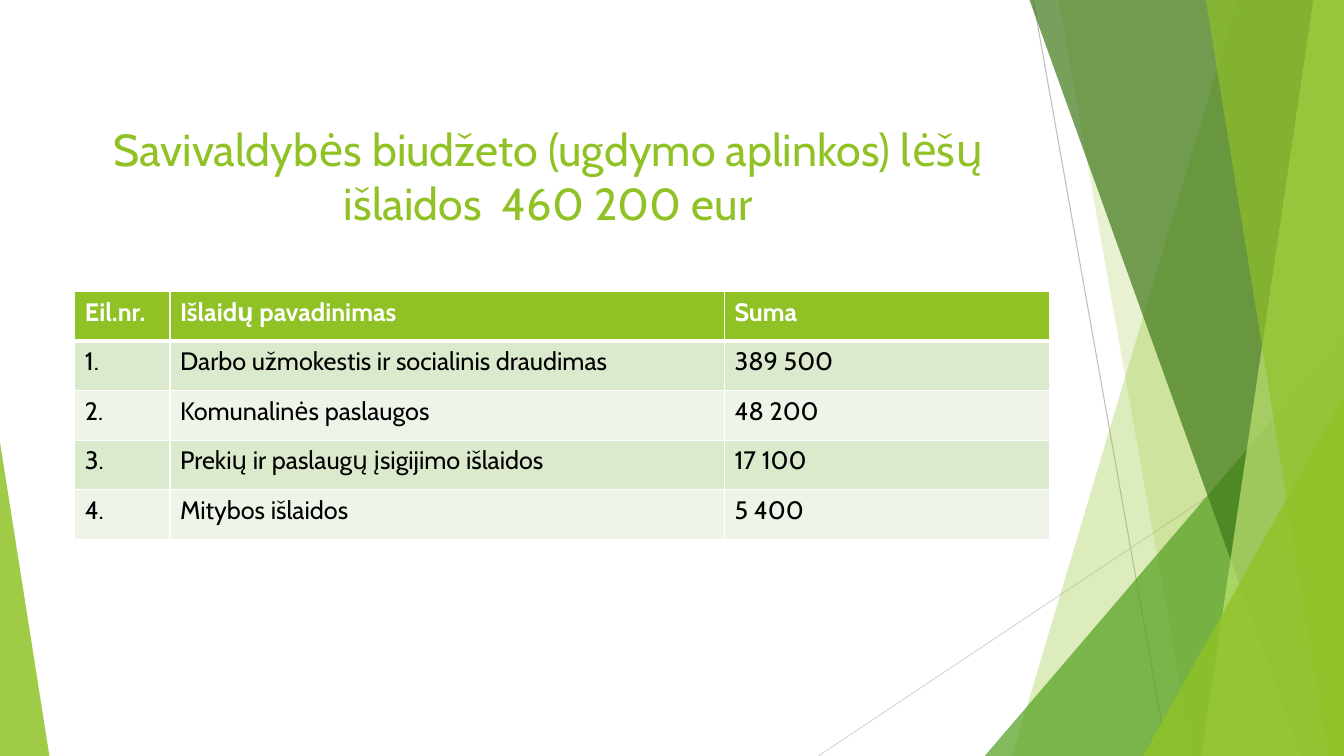
from lxml import etree
from pptx import Presentation
from pptx.dml.color import RGBColor
from pptx.enum.shapes import MSO_CONNECTOR, MSO_SHAPE
from pptx.enum.text import MSO_ANCHOR, PP_ALIGN
from pptx.oxml.ns import qn
from pptx.util import Pt

STRAIGHT = MSO_CONNECTOR.STRAIGHT
TRIANGLE = MSO_SHAPE.ISOSCELES_TRIANGLE
TOP = MSO_ANCHOR.TOP
CENTER = PP_ALIGN.CENTER

WIDTH, HEIGHT = 960, 540
FONT = "Cabin"
COLORS = {
    "lime": "90C226",
    "pale lime": "C0E474",
    "green": "54A021",
    "dark green": "3F7819",
    "gray": "BFBFBF",
    "light gray": "D9D9D9",
    "odd row": "DBE9CD",
    "even row": "EEF4E8",
    "white": "FFFFFF",
    "black": "000000",
}

TITLE = "Savivaldybės biudžeto (ugdymo aplinkos) lėšų išlaidos  460 200 eur"
COLUMN_WIDTHS = (68, 396, 232)
ROW_HEIGHT = 35.4
EXPENSES = [
    ("Eil.nr.", "Išlaidų pavadinimas", "Suma"),
    ("1.", "Darbo užmokestis ir socialinis draudimas", "389 500"),
    ("2.", "Komunalinės paslaugos", "48 200"),
    ("3.", "Prekių ir paslaugų įsigijimo išlaidos", "17 100"),
    ("4.", "Mitybos išlaidos", "5 400"),
]


class SlideBuilder:
    def __init__(self, slide, font, colors):
        self.slide = slide
        self.font = font
        self.colors = colors

    def rgb(self, name):
        return RGBColor.from_string(self.colors[name])

    def paint(self, shape, color, opacity):
        """Fill a shape with a see-through colour, without outline or shadow."""
        shape.shadow.inherit = False
        shape.line.fill.background()
        shape.fill.solid()
        shape.fill.fore_color.rgb = self.rgb(color)
        color_node = shape._element.spPr.find(qn("a:solidFill"))[0]
        etree.SubElement(color_node, qn("a:alpha"), val=str(opacity * 1000))

    def line(self, start, end, color):
        ends = [Pt(value) for value in (*start, *end)]
        line = self.slide.shapes.add_connector(STRAIGHT, *ends)
        line.line.color.rgb = self.rgb(color)
        line.line.width = Pt(0.75)
        etree.SubElement(line._element.spPr, qn("a:effectLst"))

    def ribbon(self, top_x, bottom_x, color, opacity):
        """Fill the area from a slanted edge to the right side of the slide."""
        top = -0.6
        corners = [(WIDTH, top), (WIDTH, HEIGHT), (bottom_x, HEIGHT)]
        outline = self.slide.shapes.build_freeform(Pt(top_x), Pt(top))
        outline.add_line_segments([(Pt(x), Pt(y)) for x, y in corners])
        self.paint(outline.convert_to_shape(), color, opacity)

    def corner(self, left, top, width, apex, color, opacity):
        """Draw a right triangle that stands on the bottom of the slide."""
        shape = self.slide.shapes.add_shape(
            TRIANGLE, Pt(left), Pt(top), Pt(width), Pt(HEIGHT - top))
        shape.adjustments[0] = apex
        self.paint(shape, color, opacity)

    def set_text(self, frame, text, size, color, bold=False):
        frame.text = text
        para = frame.paragraphs[0]
        for span in para.runs:
            span.font.name = self.font
            span.font.size = Pt(size)
            span.font.bold = bold
            span.font.color.rgb = self.rgb(color)
        return para

    def title(self, text, left, top, width, height):
        box = self.slide.shapes.add_textbox(
            Pt(left), Pt(top), Pt(width), Pt(height))
        box.text_frame.word_wrap = True
        box.text_frame.vertical_anchor = TOP
        self.set_text(box.text_frame, text, 32, "lime").alignment = CENTER

    def borders(self, cell, top, bottom):
        widths = {"lnL": 1, "lnR": 1, "lnT": top, "lnB": bottom}
        properties = cell._tc.get_or_add_tcPr()
        for index, (side, width) in enumerate(widths.items()):
            border = etree.Element(qn(f"a:{side}"), w=str(Pt(width)))
            fill = etree.SubElement(border, qn("a:solidFill"))
            etree.SubElement(fill, qn("a:srgbClr"), val=self.colors["white"])
            properties.insert(index, border)

    def table(self, rows, left, top, column_widths, row_height):
        frame = self.slide.shapes.add_table(
            len(rows), len(column_widths), Pt(left), Pt(top),
            Pt(sum(column_widths)), Pt(row_height * len(rows)))
        table = frame.table
        for column, width in zip(table.columns, column_widths):
            column.width = Pt(width)
        for number, values in enumerate(rows):
            header = number == 0
            stripe = "odd row" if number % 2 else "even row"
            table.rows[number].height = Pt(row_height)
            for cell, value in zip(table.rows[number].cells, values):
                self.set_text(cell.text_frame, value, 18,
                              "white" if header else "black", bold=header)
                cell.fill.solid()
                cell.fill.fore_color.rgb = self.rgb(
                    "lime" if header else stripe)
                self.borders(cell, top=3 if number == 1 else 1,
                             bottom=3 if header else 1)


def main():
    deck = Presentation()
    deck.slide_width, deck.slide_height = Pt(WIDTH), Pt(HEIGHT)
    page = SlideBuilder(
        deck.slides.add_slide(deck.slide_layouts[6]), FONT, COLORS)

    page.line((738, 0), (834, HEIGHT), "gray")
    page.line((WIDTH, 290), (584.5, HEIGHT), "light gray")
    page.ribbon(884.2, 723, "lime", 30)
    page.ribbon(756, 851.8, "lime", 20)
    page.corner(703.4, 240, WIDTH - 703.4, 1, "green", 72)
    page.ribbon(735.2, 929.5, "dark green", 70)
    page.ribbon(938.2, 858.2, "pale lime", 70)
    page.ribbon(861.2, 949, "lime", 65)
    page.corner(816.5, 283, WIDTH - 816.5, 1, "lime", 80)
    page.corner(0, 316, 35.3, 0, "lime", 85)

    page.title(TITLE, 53.5, 83.5, 676.8, 103.7)
    page.table(EXPENSES, 53.5, 208.4, COLUMN_WIDTHS, ROW_HEIGHT)
    deck.save("out.pptx")


if __name__ == "__main__":
    main()
